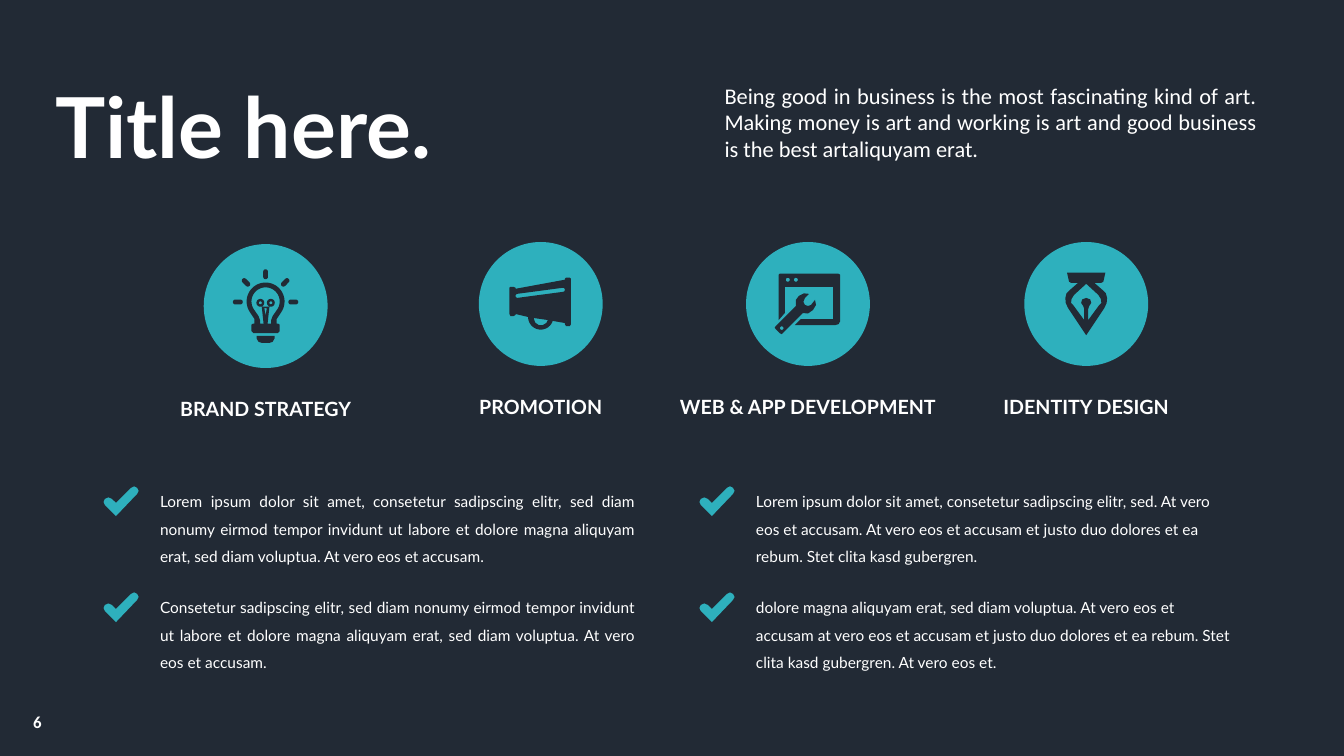
from math import cos, radians, sin
from pptx import Presentation as Deck
from pptx.dml.color import RGBColor as RGB
from pptx.enum.shapes import MSO_SHAPE as Kind
from pptx.enum.text import MSO_ANCHOR as Anchor, MSO_AUTO_SIZE as Fit, PP_ALIGN as Align
from pptx.oxml.ns import qn
from pptx.util import Inches, Pt

NAVY = RGB(0x22, 0x2A, 0x35)
TEAL = RGB(0x2E, 0xB0, 0xBD)
WHITE = RGB(0xFF, 0xFF, 0xFF)
COLS, ROWS = 128, 72


def arc(x, y, r, start=0, stop=360, steps=20):
    turns = [radians(start + (stop - start) * i / steps) for i in range(steps + 1)]
    return [(x + r * cos(t), y + r * sin(t)) for t in turns]


def bar(x, y, turn, size, r):
    end_x = x + size * cos(radians(turn))
    end_y = y + size * sin(radians(turn))
    return (arc(x, y, r, turn + 90, turn + 270, 10)
            + arc(end_x, end_y, r, turn - 90, turn + 90, 10))


def mirror(half):
    return half + [(-x, y) for x, y in reversed(half)]


def ray(turn):
    t = radians(turn)
    return bar(25 * cos(t), 25 * sin(t) - 4, turn, 5, 2.4)


BULB = [
    mirror(arc(0, -4.5, 18.8, -90, 32) + [
        (11, 13), (11, 17.5), (12.5, 17.5), (14, 18.5), (14, 25), (12, 27)]),
    mirror(arc(0, -4.5, 14, -90, 32) + [(7, 10), (5.5, 14), (5.5, 17.5)]),
    mirror([(3.8, 0.7), (2, 17.5)]),
    mirror([(1.2, 2.2), (0, 9.5)]),
    mirror([(9, 29.5), (9, 32), (7, 35.5), (4, 36.5)]),
    *[arc(side * 5.2, -3.2, r) for side in (-1, 1) for r in (3.9, 1.5)],
    *[ray(turn) for turn in range(180, 361, 45)],
]
HORN = [
    [(29, -26), (25, -26), (24, -25), (24, -24), (-25, -15), (-25, -16),
     (-27, -17), (-30, -17), (-31, -16), (-31, 10), (-30, 12), (-27, 12),
     (-25, 11), (-25, 10)] + arc(0, 13, 12.5, 180, 18)
    + [(24, 19), (24, 20), (25, 22), (29, 22), (30, 20), (30, -25)],
    [(-7, 14), (-5.5, 18.5), (-2, 21), (2, 21), (5.5, 19), (7, 16)],
    bar(-23, -8, -7.6, 45.4, 2),
]
WEB = [
    [(30, -30), (-28, -30), (-29, -29), (-29, 16), (-23, 9), (-23, -17),
     (25, -17), (25, 15), (-7, 15), (-13, 21), (27, 21), (30.5, 20), (32, 17),
     (32, -29)],
    [(5, 6), (8, 1), (7, -4), (3, 1), (0, 2), (-3, 1), (-4.5, -2), (-3, -6),
     (1, -10), (-4, -10.5), (-9, -8), (-12, -4), (-12, 2), (-32, 22),
     (-33, 23.5), (-32, 25), (-28, 29), (-26, 30), (-25, 29), (-5, 9), (0, 9.5)],
    arc(-26, 24, 1.8),
    arc(-20, -24, 2),
    arc(-12, -24, 2),
]
PEN = [
    mirror([(19, -31), (17, -22), (15, -21), (8, -21), (16, -14), (19.5, -10.5),
            (20.7, -6), (20.3, -1), (18, 4), (0, 31)]),
    mirror([(0, -20), (12, -9), (14.5, -5), (15, -1), (13, 1), (2, 16), (2, 5),
            (3, 2), (5, -1), (4, -4.5), (0, -6)]),
]
CHECK = [
    [(21, -28), (18, -29.5), (15, -28), (0, -13), (-4, -17), (-7.5, -18.5),
     (-11, -17), (-12.3, -14), (-11, -11), (0, 0), (21, -22), (22.5, -25)],
]


class Page:
    def __init__(self, deck):
        self.unit_x = deck.slide_width / COLS
        self.unit_y = deck.slide_height / ROWS
        self.slide = deck.slides.add_slide(deck.slide_layouts[1])
        self.shapes = self.slide.shapes
        back = self.slide.background.fill
        back.solid()
        back.fore_color.rgb = NAVY

    def place(self, x, y, w, h):
        return (round(x * self.unit_x), round(y * self.unit_y),
                round(w * self.unit_x), round(h * self.unit_y))

    def style(self, shape, words, font, size, bold=False, align=Align.LEFT,
              wrap=True, space=1.0, above=0):
        frame = shape.text_frame
        frame.text = words
        frame.word_wrap = wrap
        frame.auto_size = Fit.NONE
        frame.vertical_anchor = Anchor.TOP
        para = frame.paragraphs[0]
        para.alignment = align
        para.line_spacing = space
        para.space_before = Pt(above)
        para.font.name = font
        para.font.size = Pt(size)
        para.font.bold = bold
        para.font.color.rgb = WHITE
        return para

    def move(self, shape, *box):
        shape.left, shape.top, shape.width, shape.height = self.place(*box)

    def title(self, words, *box):
        self.move(self.shapes.title, *box)
        self.style(self.shapes.title, words, "Lato", 60, True, above=10)

    def intro(self, words, *box):
        body = self.slide.placeholders[1]
        self.move(body, *box)
        para = self.style(body, words, "Calibri", 16, align=Align.JUSTIFY)
        props = para._p.get_or_add_pPr()
        props.set("marL", "0")
        props.set("indent", "0")
        bullet = props.makeelement(qn("a:buNone"), {})
        props.find(qn("a:defRPr")).addprevious(bullet)

    def text(self, words, box, font="Lato", **look):
        self.style(self.shapes.add_textbox(*self.place(*box)), words, font, **look)

    def paint(self, shape, color):
        shape.shadow.inherit = False
        shape.fill.solid()
        shape.fill.fore_color.rgb = color
        shape.line.fill.background()

    def disc(self, x, y, size):
        box = self.place(x - size / 2, y - size / 2, size, size)
        self.paint(self.shapes.add_shape(Kind.OVAL, *box), TEAL)

    def icon(self, x, y, loops, color):
        unit = Inches(0.01)
        form = None
        for loop in loops:
            dots = [(px * unit, py * unit) for px, py in loop]
            if form is None:
                form = self.shapes.build_freeform(*dots[0])
            else:
                form.move_to(*dots[0])
            form.add_line_segments(dots[1:], close=True)
        self.paint(form.convert_to_shape(*self.place(x, y, 0, 0)[:2]), color)

    def service(self, x, y, words, width, loops):
        self.disc(x, y, 11.8)
        self.icon(x, y, loops, NAVY)
        self.text(words, (x - width / 2, y + 8.2, width, 3.26), size=14,
                  bold=True, align=Align.CENTER, wrap=False)

    def point(self, x, y, words, align):
        self.text(words, (x, y, 47.15, 8.65), size=11, align=align, space=1.5)
        self.icon(x - 3.25, y + 3.65, CHECK, TEAL)


SERVICES = [
    (25.3, 29.15, "BRAND STRATEGY", 18.5, BULB),
    (51.5, 28.95, "PROMOTION", 13.6, HORN),
    (76.95, 28.95, "WEB & APP DEVELOPMENT", 26.6, WEB),
    (103.45, 28.95, "IDENTITY DESIGN", 17.8, PEN),
]
POINTS = [
    (14.3, Align.JUSTIFY, [
        "Lorem ipsum dolor sit amet, consetetur sadipscing elitr, sed diam nonumy eirmod tempor invidunt ut labore et dolore magna aliquyam erat, sed diam voluptua. At vero eos et accusam.",
        "Consetetur sadipscing elitr, sed diam nonumy eirmod tempor invidunt ut labore et dolore magna aliquyam erat, sed diam voluptua. At vero eos et accusam."]),
    (71.05, Align.LEFT, [
        "Lorem ipsum dolor sit amet, consetetur sadipscing elitr, sed. At vero eos et accusam. At vero eos et accusam et justo duo dolores et ea rebum. Stet clita kasd gubergren.",
        "dolore magna aliquyam erat, sed diam voluptua. At vero eos et accusam at vero eos et accusam et justo duo dolores et ea rebum. Stet clita kasd gubergren. At vero eos et."]),
]


def main():
    deck = Deck()
    deck.slide_width, deck.slide_height = Inches(13.33), Inches(7.5)
    page = Page(deck)
    page.title("Title here.", 4.3, 6.6, 64.5, 4.2)
    page.intro("Being good in business is the most fascinating kind of art. Making money is art and working is art and good business is the best artaliquyam erat.",
               68.05, 7.3, 52.6, 8.75)
    for service in SERVICES:
        page.service(*service)
    for x, align, items in POINTS:
        for row, words in enumerate(items):
            page.point(x, 45.5 + 10.1 * row, words, align)
    page.text("6", (1.65, 67.3, 3.85, 2.9), "Calibri", size=12, bold=True,
              align=Align.CENTER, wrap=False)
    deck.save("out.pptx")


if __name__ == "__main__":
    main()
